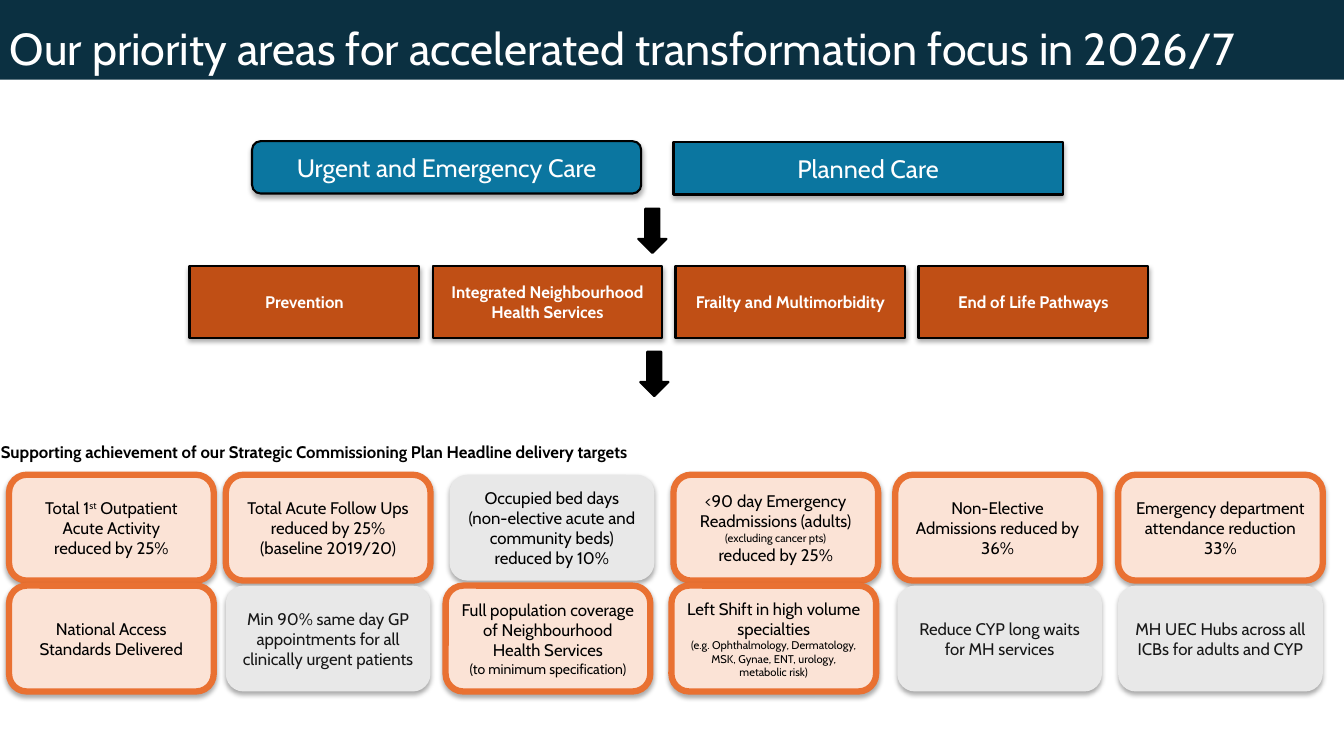
from lxml import etree
from pptx import Presentation
from pptx import util as u
from pptx.dml.color import RGBColor
from pptx.enum import shapes, text
from pptx.oxml import ns

SHAPE = shapes.MSO_SHAPE
ALIGN = text.PP_ALIGN
ANCHOR = text.MSO_ANCHOR


def rgb(value):
    return RGBColor.from_string(value)


def write(tf, content, sizes=(12,), color="000000", bold=False,
          align=ALIGN.CENTER, anchor=ANCHOR.MIDDLE):
    """Fill a frame line by line; sizes go per line and ^marks^ raise text."""
    tf.word_wrap = True
    tf.vertical_anchor = anchor
    for i, line in enumerate(content.split("\n")):
        p = tf.paragraphs[0] if i == 0 else tf.add_paragraph()
        p.alignment = align
        for j, part in enumerate(line.split("^")):
            r = p.add_run()
            r.text = part
            r.font.name = "Cabin"
            r.font.size = u.Pt(sizes[min(i, len(sizes) - 1)])
            r.font.bold = bold
            r.font.color.rgb = rgb(color)
            if j % 2:
                r.font._element.set("baseline", "30000")


class Board:
    """Hold the style and the current slide."""

    navy, blue, rust = "0B3041", "0B76A0", "C04F15"
    peach, orange, grey = "FBE3D6", "E97132", "E8E8E8"
    black, white, ink = "000000", "FFFFFF", "171717"

    def __init__(self, prs):
        self.s = prs.slides.add_slide(prs.slide_layouts[6])

    def shape(self, kind, at, fill, line=None, width=1.5):
        sp = self.s.shapes.add_shape(kind, *map(u.Inches, at))
        sp.shadow.inherit = False
        sp.fill.solid()
        sp.fill.fore_color.rgb = rgb(fill)
        if line:
            sp.line.color.rgb = rgb(line)
            sp.line.width = u.Pt(width)
        else:
            sp.line.fill.background()
        return sp

    def shadow(self, sp):
        effects = sp._element.spPr.find(ns.qn("a:effectLst"))
        outer = etree.SubElement(effects, ns.qn("a:outerShdw"), blurRad=str(u.Pt(3.5)),
                                 dist=str(u.Pt(2.2)), dir="5400000", algn="t", rotWithShape="0")
        color = etree.SubElement(outer, ns.qn("a:srgbClr"), val=self.black)
        etree.SubElement(color, ns.qn("a:alpha"), val="32000")

    def banner(self, content):
        sp = self.shape(SHAPE.RECTANGLE, (0, -0.02, 13.33, 0.81), self.navy)
        write(sp.text_frame, content, sizes=(32,), color=self.white,
              align=ALIGN.LEFT, anchor=ANCHOR.BOTTOM)

    def box(self, kind, at, content, fill, **style):
        sp = self.shape(kind, at, fill, self.black)
        self.shadow(sp)
        write(sp.text_frame, content, color=self.white, **style)

    def arrow(self, left, top):
        self.shape(SHAPE.DOWN_ARROW, (left, top, 0.28, 0.44), self.black, self.black)

    def heading(self, at, content):
        sp = self.s.shapes.add_textbox(*map(u.Inches, at))
        write(sp.text_frame, content, bold=True, align=ALIGN.LEFT, anchor=ANCHOR.TOP)

    def card(self, left, top, content, key, sizes=(12,), color=black):
        at = (left, top, 2.03, 1.05)
        if key:
            sp = self.shape(SHAPE.ROUNDED_RECTANGLE, at, self.peach, self.orange, 4.5)
        else:
            sp = self.shape(SHAPE.ROUNDED_RECTANGLE, at, self.grey)
        self.shadow(sp)
        write(sp.text_frame, content, sizes=sizes, color=color)


PATHWAYS = ["Prevention", "Integrated Neighbourhood Health Services",
            "Frailty and Multimorbidity", "End of Life Pathways"]

TOP_TARGETS = [
    (0.09, "Total 1^st^ Outpatient Acute Activity\nreduced by 25%", True),
    (2.24, "Total Acute Follow Ups reduced by 25%\n(baseline 2019/20)", True),
    (4.46, "Occupied bed days (non-elective acute and community beds) reduced by 10%", False),
    (6.68, "<90 day Emergency Readmissions (adults)\n(excluding cancer pts)\nreduced by 25%",
     True, (12, 8, 12)),
    (8.88, "Non-Elective Admissions reduced by 36%", True),
    (11.09, "Emergency department attendance reduction 33%", True),
]

BOTTOM_TARGETS = [
    (0.09, "National Access Standards Delivered", True),
    (2.24, "Min 90% same day GP appointments for all clinically urgent patients",
     False, (12,), Board.ink),
    (4.42, "Full population coverage of Neighbourhood Health Services\n"
     "(to minimum specification)", True, (12, 10)),
    (6.66, "Left Shift in high volume specialties\n(e.g. Ophthalmology, Dermatology, "
     "MSK, Gynae, ENT, urology, metabolic risk)", True, (12, 8)),
    (8.9, "Reduce CYP long waits for MH services", False, (12,), Board.ink),
    (11.09, "MH UEC Hubs across all ICBs for adults and CYP", False, (12,), Board.ink),
]


def main():
    prs = Presentation()
    prs.slide_width, prs.slide_height = u.Inches(13.33), u.Inches(7.5)
    board = Board(prs)
    board.banner("Our priority areas for accelerated transformation focus in 2026/7")
    board.box(SHAPE.ROUNDED_RECTANGLE, (2.5, 1.4, 3.86, 0.52),
              "Urgent and Emergency Care", board.blue, sizes=(18,))
    board.box(SHAPE.RECTANGLE, (6.68, 1.41, 3.86, 0.52),
              "Planned Care", board.blue, sizes=(18,))
    board.arrow(6.33, 2.07)
    for i, pathway in enumerate(PATHWAYS):
        board.box(SHAPE.RECTANGLE, (1.88 + 2.41 * i, 2.64, 2.28, 0.71),
                  pathway, board.rust, bold=True)
    board.arrow(6.35, 3.49)
    board.heading((-0.09, 4.33, 10.63, 0.3),
                  "Supporting achievement of our Strategic Commissioning Plan "
                  "Headline delivery targets")
    for top, targets in ((4.71, TOP_TARGETS), (5.81, BOTTOM_TARGETS)):
        for left, *target in targets:
            board.card(left, top, *target)
    prs.save("out.pptx")


if __name__ == "__main__":
    main()
